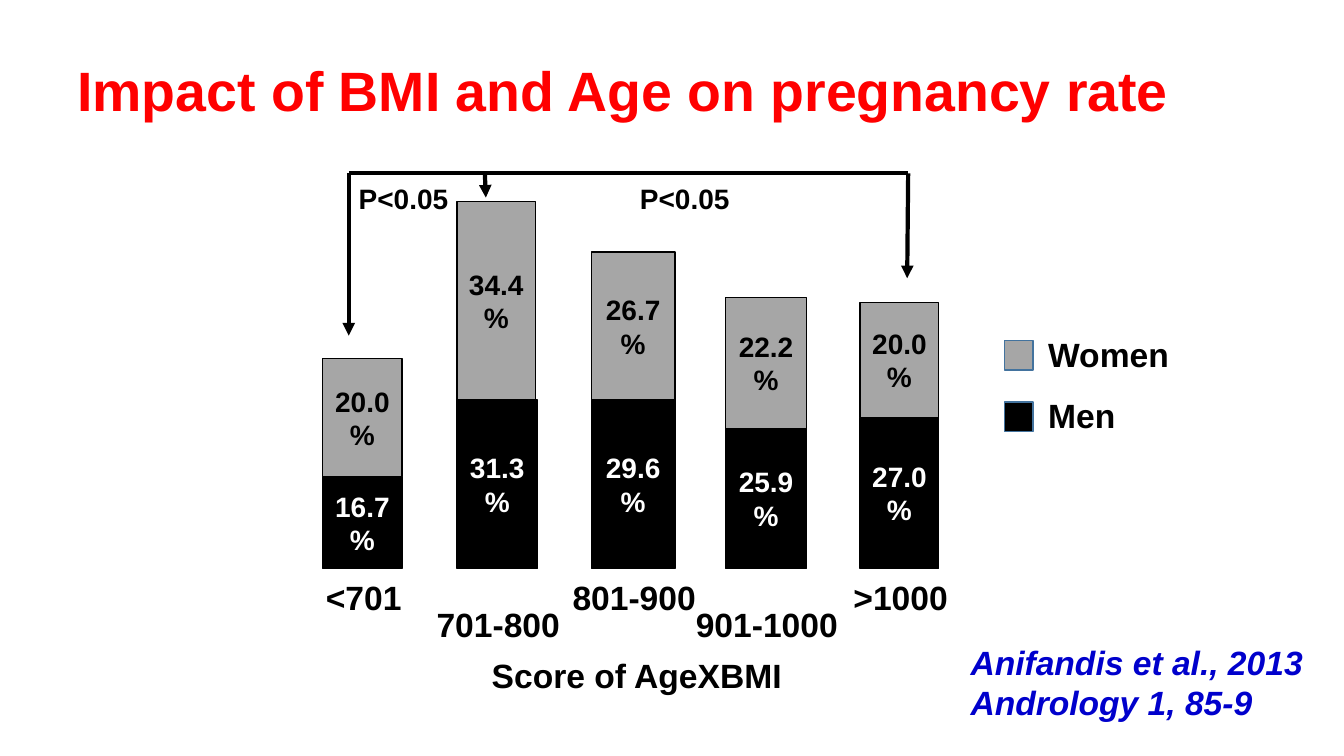
from dataclasses import dataclass

from lxml.etree import SubElement
from pptx import Presentation
from pptx.dml.color import RGBColor
from pptx.enum.shapes import MSO_CONNECTOR as Connector, MSO_SHAPE as Preset
from pptx.enum.text import MSO_ANCHOR as Anchor, MSO_AUTO_SIZE as AutoSize, PP_ALIGN as Align
from pptx.oxml.ns import qn
from pptx.util import Inches, Pt

SLIDE_WIDTH, SLIDE_HEIGHT = Inches(13.333), Inches(7.5)
UNIT = SLIDE_WIDTH / 40  # square grid: 40 columns by 22.5 rows


@dataclass(frozen=True)
class Theme:
    font: str = "Arial"
    black: str = "000000"
    white: str = "FFFFFF"
    gray: str = "A6A6A6"
    swatch_line: str = "43739E"
    title: str = "FF0000"
    citation: str = "0000CC"
    title_size: float = 39.6
    label_size: float = 24
    value_size: float = 20
    thin: float = 1
    thick: float = 3


THEME = Theme()


@dataclass(frozen=True)
class Box:
    left: float
    top: float
    width: float
    height: float

    def inner(self, left, top, width, height):
        """Return a box whose corner is measured from this box's corner."""
        return Box(self.left + left, self.top + top, width, height)

    def lengths(self):
        return [round(side * UNIT) for side in (self.left, self.top, self.width, self.height)]


@dataclass(frozen=True)
class Bar:
    score: str
    men: str
    women: str
    men_height: float
    women_height: float
    men_width: float
    women_width: float
    label_width: float


BARS = [
    Bar("<701", "16.7 %", "20.0%", 2.73, 3.51, 2.37, 2.37, 2.88),
    Bar("701-800", "31.3%", "34.4%", 5.01, 5.91, 2.4, 2.34, 4.32),
    Bar("801-900", "29.6%", "26.7%", 5.01, 4.41, 2.49, 2.49, 4.32),
    Bar("901-1000", "25.9%", "22.2%", 4.17, 3.9, 2.4, 2.4, 4.89),
    Bar(">1000", "27.0%", "20.0%", 4.5, 3.42, 2.34, 2.34, 3.45),
]
BAR_PITCH = 4


def add_run(paragraph, text, size, color, italic=False):
    run = paragraph.add_run()
    run.text = text
    font = run.font
    font.name, font.size, font.bold = THEME.font, Pt(size), True
    if italic:
        font.italic = True
    font.color.rgb = RGBColor.from_string(color)


def add_label(slide, box, lines, size=THEME.label_size, color=THEME.black, italic=False):
    frame = slide.shapes.add_textbox(*box.lengths()).text_frame
    frame.word_wrap = False
    frame.auto_size = AutoSize.SHAPE_TO_FIT_TEXT
    for index, line in enumerate(lines):
        paragraph = frame.add_paragraph() if index else frame.paragraphs[0]
        add_run(paragraph, line, size, color, italic)


def add_block(slide, box, fill, line):
    block = slide.shapes.add_shape(Preset.RECTANGLE, *box.lengths())
    block.shadow.inherit = False
    block.fill.solid()
    block.fill.fore_color.rgb = RGBColor.from_string(fill)
    block.line.color.rgb = RGBColor.from_string(line)
    block.line.width = Pt(THEME.thin)
    return block


def add_segment(slide, box, value, fill, text_color):
    frame = add_block(slide, box, fill, THEME.black).text_frame
    frame.word_wrap = True
    frame.vertical_anchor = Anchor.MIDDLE
    paragraph = frame.paragraphs[0]
    paragraph.alignment = Align.CENTER
    add_run(paragraph, value, THEME.value_size, text_color)


def add_line(slide, box, start, end, arrow=True):
    points = [round((origin + offset) * UNIT) for point in (start, end)
              for origin, offset in zip((box.left, box.top), point)]
    connector = slide.shapes.add_connector(Connector.STRAIGHT, *points)
    connector.line.color.rgb = RGBColor.from_string(THEME.black)
    connector.line.width = Pt(THEME.thick)
    properties = connector.element.find(qn("p:spPr"))
    if arrow:
        SubElement(properties.find(qn("a:ln")), qn("a:tailEnd"), type="triangle")
    SubElement(properties, qn("a:effectLst"))


def add_title(slide, box):
    title = slide.shapes.title
    title.left, title.top, title.width, title.height = box.lengths()
    frame = title.text_frame
    frame.word_wrap = True
    frame.vertical_anchor = Anchor.MIDDLE
    paragraph = frame.paragraphs[0]
    paragraph.alignment = Align.LEFT
    paragraph.line_spacing = 0.9
    add_run(paragraph, "Impact of BMI and Age on pregnancy rate", THEME.title_size, THEME.title)


def add_bars(slide, box):
    """Stack both segments on the bottom edge of the box, with scores below it."""
    for index, bar in enumerate(BARS):
        left = index * BAR_PITCH
        men_top = box.height - bar.men_height
        add_segment(slide, box.inner(left, men_top, bar.men_width, bar.men_height),
                    bar.men, THEME.black, THEME.white)
        add_segment(slide, box.inner(left, men_top - bar.women_height, bar.women_width, bar.women_height),
                    bar.women, THEME.gray, THEME.black)
        label_left = left + (bar.men_width - bar.label_width) / 2 + 0.06
        label_top = box.height + (0.92 if index % 2 else 0.1)
        add_label(slide, box.inner(label_left, label_top, bar.label_width, 1.5), [bar.score])
    add_label(slide, box.inner(4.74, box.height + 2.43, 9.33, 1.5), ["Score of AgeXBMI"])


def add_significance(slide, box):
    """Draw the bracket along the top edge of the box, with its arrows and P values."""
    first, second, last = 0.78, 4.83, 17.43
    add_line(slide, box, (first, 0), (last, 0), arrow=False)
    for start, end, depth in ((first, first, 4.83), (last, last - 0.03, 3.12),
                              (second, second + 0.03, 0.72)):
        add_line(slide, box, (start, 0), (end, depth))
    for left in (first, 9.15):
        add_label(slide, box.inner(left, 0.09, 3.3, 1.32), ["P<0.05"], THEME.value_size)


def add_legend(slide, box):
    entries = (("Women", THEME.gray, 4.23), ("Men", THEME.black, 2.64))
    for index, (name, fill, width) in enumerate(entries):
        top = index * box.height / len(entries)
        add_block(slide, box.inner(0, top + 0.36, 0.84, 0.87), fill, THEME.swatch_line)
        add_label(slide, box.inner(1, top, width, 1.5), [name])


def add_citation(slide, box):
    add_label(slide, box, ["Anifandis et al., 2013", "Andrology 1, 85-9"],
              color=THEME.citation, italic=True)


def main():
    presentation = Presentation()
    presentation.slide_width, presentation.slide_height = SLIDE_WIDTH, SLIDE_HEIGHT
    slide = presentation.slides.add_slide(presentation.slide_layouts.get_by_name("Title Only"))
    chart = Box(9.6, 5.16, 18.34, 11.76)
    add_title(slide, Box(2, 0.9, 36, 3.75))
    add_bars(slide, chart)
    add_legend(slide, Box(29.9, 9.78, 5.2, 3.66))
    add_significance(slide, chart)
    add_citation(slide, Box(28.59, 18.96, 10.59, 2.73))
    presentation.save("out.pptx")


if __name__ == "__main__":
    main()
